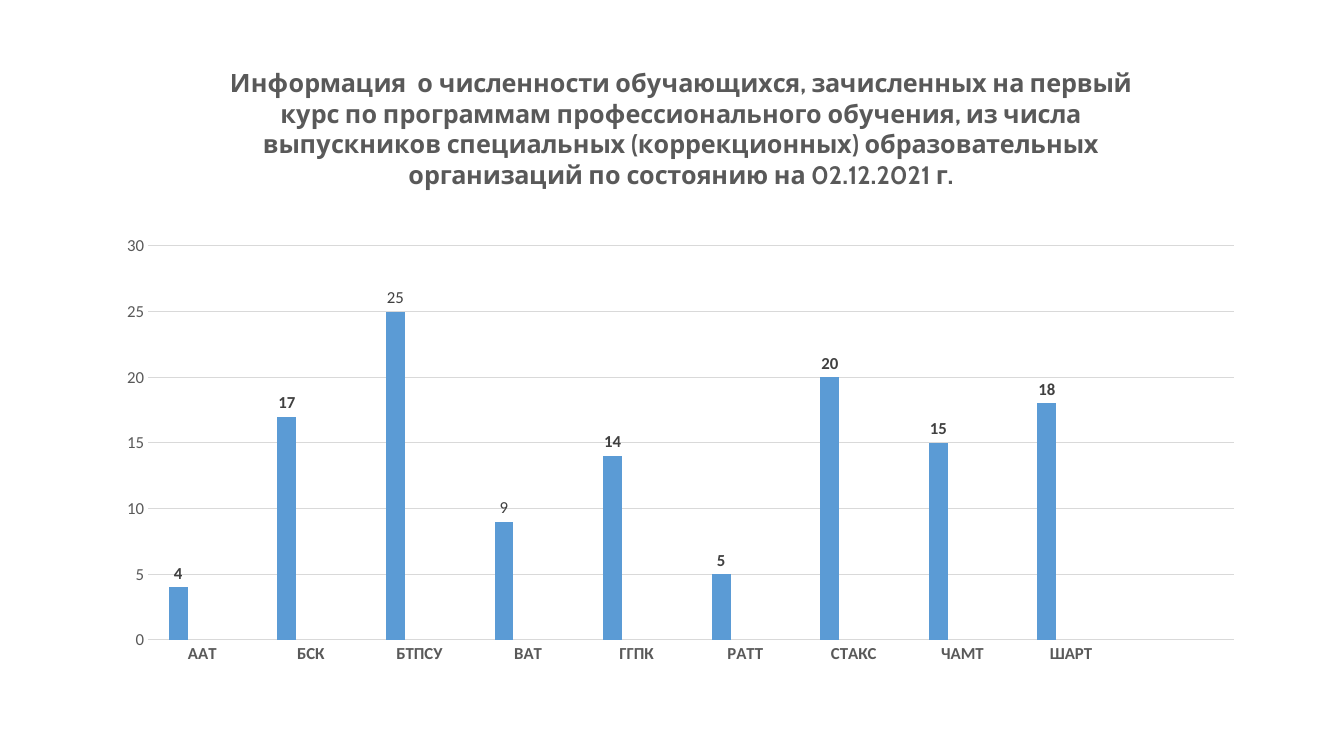
from lxml import etree
from pptx import Presentation
from pptx.chart.data import CategoryChartData
from pptx.dml.color import RGBColor
from pptx.enum.chart import XL_CHART_TYPE, XL_LABEL_POSITION, XL_TICK_MARK
from pptx.oxml import parse_xml
from pptx.oxml.ns import nsdecls, qn
from pptx.util import Pt

PX = 9072  # EMU per pixel at 100.8 pixels to the inch
BLACK = RGBColor(0x00, 0x00, 0x00)
GRAY_TEXT = RGBColor(0x59, 0x59, 0x59)
LABEL_TEXT = RGBColor(0x40, 0x40, 0x40)
GRID_GRAY = RGBColor(0xD9, 0xD9, 0xD9)
BLUE = RGBColor(0x5B, 0x9B, 0xD5)
ORANGE = RGBColor(0xED, 0x7D, 0x31)
SERIES_GRAY = RGBColor(0xA5, 0xA5, 0xA5)

TITLE = (
    "Информация  о численности обучающихся, зачисленных на первый курс "
    "по программам профессионального обучения, из числа выпускников "
    "специальных (коррекционных) образовательных организаций "
    "по состоянию на 02.12.2021 г."
)
ENROLLED = {
    "ААТ": 4, "БСК": 17, "БТПСУ": 25, "ВАТ": 9, "ГГПК": 14,
    "РАТТ": 5, "СТАКС": 20, "ЧАМТ": 15, "ШАРТ": 18, "": None,
}
REGULAR_LABELS = ("БТПСУ", "ВАТ")
CHART_LEFT, CHART_TOP, CHART_WIDTH, CHART_HEIGHT = 104, 43, 1154, 634
PLOT_LEFT, PLOT_TOP, PLOT_WIDTH, PLOT_HEIGHT = 148, 246, 1086, 394


def set_font(font, size, color, bold=False, name="Calibri"):
    font.size = Pt(size)
    font.bold = bold
    font.name = name
    font.color.rgb = color


def set_line(line, color):
    line.color.rgb = color
    line.width = Pt(0.75)


presentation = Presentation()
presentation.slide_width = 1344 * PX
presentation.slide_height = 756 * PX
slide = presentation.slides.add_slide(presentation.slide_layouts[6])

# Chart: the two empty series keep their room beside each bar
chart_data = CategoryChartData()
chart_data.categories = list(ENROLLED)
chart_data.add_series("Series 1", list(ENROLLED.values()))
for name in ("Series 2", "Series 3"):
    chart_data.add_series(name, [None] * len(ENROLLED))
chart = slide.shapes.add_chart(
    XL_CHART_TYPE.COLUMN_CLUSTERED,
    CHART_LEFT * PX, CHART_TOP * PX, CHART_WIDTH * PX, CHART_HEIGHT * PX,
    chart_data,
).chart
set_font(chart.font, 10, BLACK)
chart.has_legend = False

# Title
chart.has_title = True
chart.chart_title.include_in_layout = False
title_frame = chart.chart_title.text_frame
title_frame.text = TITLE
set_font(title_frame.paragraphs[0].runs[0].font, 18, GRAY_TEXT, True, "Cabin")

# Columns and their labels
plot = chart.plots[0]
plot.gap_width = 219
plot.overlap = -27
plot.vary_by_categories = False
for series, color in zip(plot.series, (BLUE, ORANGE, SERIES_GRAY)):
    series.format.fill.solid()
    series.format.fill.fore_color.rgb = color
    series.invert_if_negative = False

enrolled_series = plot.series[0]
labels = enrolled_series.data_labels
labels.show_value = True
labels.position = XL_LABEL_POSITION.OUTSIDE_END
set_font(labels.font, 12, LABEL_TEXT, True)
for index, college in enumerate(ENROLLED):
    if college in REGULAR_LABELS:
        label = enrolled_series.points[index].data_label
        set_font(label.font, 12, LABEL_TEXT)
        label.position = XL_LABEL_POSITION.OUTSIDE_END

# Axes
category_axis = chart.category_axis
value_axis = chart.value_axis
for axis, bold in ((category_axis, True), (value_axis, False)):
    axis.major_tick_mark = XL_TICK_MARK.NONE
    axis.minor_tick_mark = XL_TICK_MARK.NONE
    set_font(axis.tick_labels.font, 12, GRAY_TEXT, bold)
set_line(category_axis.format.line, GRID_GRAY)
value_axis.minimum_scale = 0
value_axis.maximum_scale = 30
value_axis.major_unit = 5
value_axis.format.line.fill.background()
set_line(value_axis.major_gridlines.format.line, GRID_GRAY)

# Place of the plot area inside the chart, as fractions of its size
plot_area = chart.element.find(".//" + qn("c:plotArea"))
for old_layout in plot_area.findall(qn("c:layout")):
    plot_area.remove(old_layout)
layout = parse_xml(f"<c:layout {nsdecls('c')}><c:manualLayout/></c:layout>")
settings = (
    ("layoutTarget", "inner"),
    ("xMode", "edge"),
    ("yMode", "edge"),
    ("x", (PLOT_LEFT - CHART_LEFT) / CHART_WIDTH),
    ("y", (PLOT_TOP - CHART_TOP) / CHART_HEIGHT),
    ("w", PLOT_WIDTH / CHART_WIDTH),
    ("h", PLOT_HEIGHT / CHART_HEIGHT),
)
for tag, value in settings:
    etree.SubElement(layout[0], qn(f"c:{tag}")).set("val", str(value))
plot_area.insert(0, layout)

presentation.save("out.pptx")
